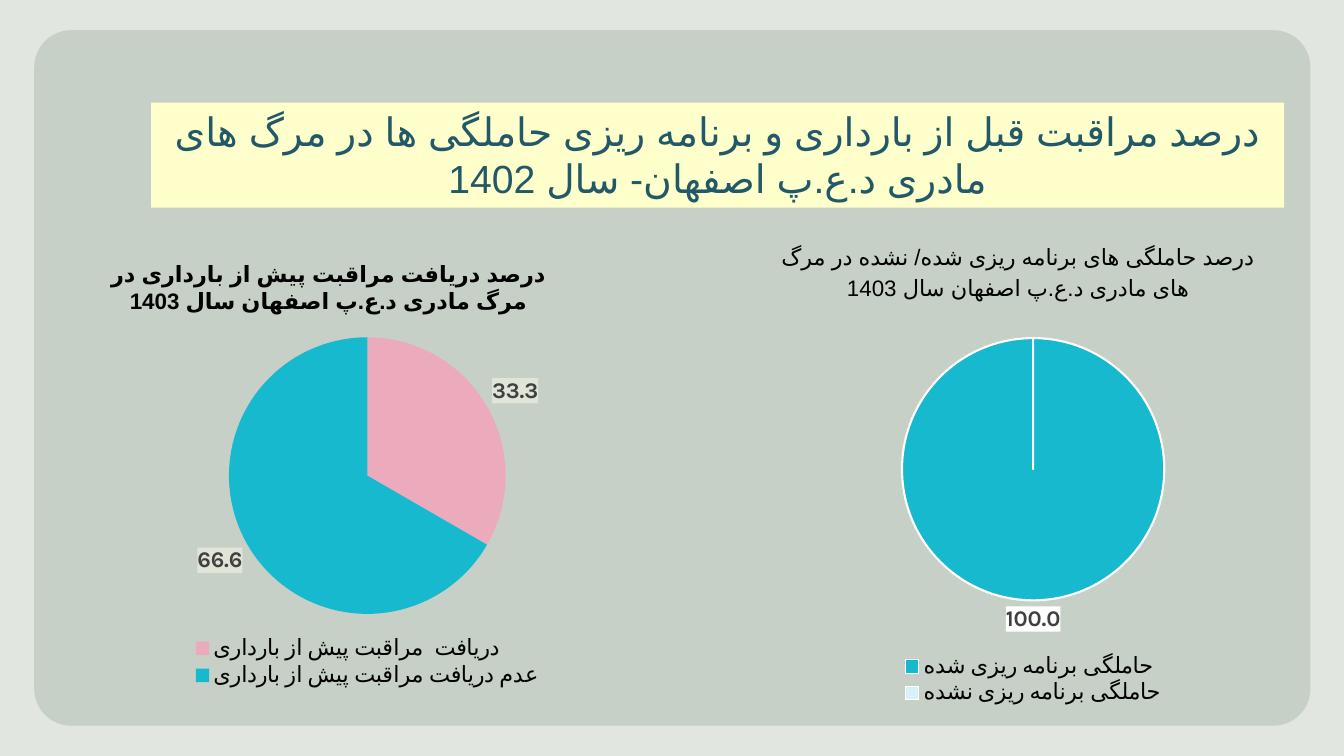
from dataclasses import dataclass

from lxml.etree import SubElement
from pptx import Presentation
from pptx.chart.data import CategoryChartData
from pptx.dml.color import RGBColor
from pptx.enum.chart import XL_CHART_TYPE, XL_LABEL_POSITION, XL_LEGEND_POSITION
from pptx.enum.shapes import MSO_SHAPE
from pptx.enum.text import MSO_ANCHOR, PP_ALIGN
from pptx.oxml import parse_xml
from pptx.oxml.ns import nsdecls, qn
from pptx.util import Pt

TEXT_FONT, PERSIAN_FONT, CHART_FONT = "Times New Roman", "Arial", "Karla"
TURQUOISE = "17B9CF"

Box = tuple[float, float, float, float]


@dataclass
class Caption:
    text: str
    box: Box
    size: float = 16
    color: str = "000000"
    fill: str | None = None
    bold: bool = False
    right_to_left: bool = True
    line_spacing: float = 1.0


@dataclass
class Pie:
    box: Box
    slices: dict[str, float]
    colors: tuple[str, str]
    label_fill: str
    plot_area: Box  # fractions of the chart
    legend_area: Box  # fractions of the chart
    outline: str | None = None


CAPTIONS = [
    Caption("درصد مراقبت قبل از بارداری و برنامه ریزی حاملگی ها در مرگ های مادری د.ع.پ اصفهان- سال 1402",
            (108, 73.4, 809.3, 74.9), size=28, color="215968", fill="FFFFCC"),
    Caption("درصد حاملگی های برنامه ریزی شده/ نشده در مرگ های مادری د.ع.پ اصفهان سال 1403",
            (543.6, 167, 367.2, 51.8), line_spacing=1.15),
    Caption("درصد دریافت مراقبت پیش از بارداری در مرگ مادری د.ع.پ اصفهان سال 1403",
            (58.3, 182.2, 352.8, 46.1), bold=True, right_to_left=False),
]

PIES = [
    Pie((564.5, 230.4, 347, 275.8),
        {"حاملگی برنامه ریزی شده": 100, "حاملگی برنامه ریزی نشده": 0},
        (TURQUOISE, "D8F2FB"), "FFFFFF",
        (0.23, 0.04, 0.54, 0.68), (0.22, 0.85, 0.56, 0.15), outline="FFFFFF"),
    Pie((47.5, 230.4, 429.8, 263.5),
        {"دریافت  مراقبت پیش از بارداری": 33.3, "عدم دریافت مراقبت پیش از بارداری": 66.6},
        ("EBABBC", TURQUOISE), "E1E5D8",
        (0.27, 0.04, 0.46, 0.75), (0.2, 0.84, 0.6, 0.16)),
]


def rgb(value: str) -> RGBColor:
    return RGBColor.from_string(value)


def paint(fill, color: str) -> None:
    fill.solid()
    fill.fore_color.rgb = rgb(color)


def set_font(font, name: str, size: float, color: str, bold: bool = False) -> None:
    font.name, font.size, font.bold = name, Pt(size), bold
    font.color.rgb = rgb(color)


def add_panel(page) -> None:
    panel = page.shapes.add_shape(MSO_SHAPE.ROUNDED_RECTANGLE, Pt(24.5), Pt(21.6), Pt(911.5), Pt(496.8))
    panel.adjustments[0] = 0.053
    panel.shadow.inherit = False
    paint(panel.fill, "C7D0C7")
    panel.line.fill.background()


def add_caption(page, caption: Caption) -> None:
    box = page.shapes.add_textbox(*map(Pt, caption.box))
    if caption.fill:
        paint(box.fill, caption.fill)
    frame = box.text_frame
    frame.word_wrap = True
    frame.vertical_anchor = MSO_ANCHOR.TOP
    para = frame.paragraphs[0]
    para.text = caption.text
    para.alignment = PP_ALIGN.CENTER
    para.line_spacing = caption.line_spacing
    set_font(para.font, TEXT_FONT, caption.size, caption.color, caption.bold)

    # Persian direction, language and font
    properties = para._p.get_or_add_pPr()
    if caption.right_to_left:
        properties.set("rtl", "1")
    defaults = properties.find(qn("a:defRPr"))
    defaults.set("lang", "fa-IR")
    SubElement(defaults, qn("a:cs")).set("typeface", PERSIAN_FONT)


def place(layout, area: Box, inner: bool = False) -> None:
    """Give a chart part a fixed position and size."""
    manual = SubElement(layout, qn("c:manualLayout"))
    settings = [("layoutTarget", "inner")] if inner else []
    settings += [("xMode", "edge"), ("yMode", "edge"), *zip("xywh", map(str, area))]
    for tag, value in settings:
        SubElement(manual, qn(f"c:{tag}")).set("val", value)


def add_pie(page, pie: Pie) -> None:
    data = CategoryChartData(number_format="0.0")
    data.categories = list(pie.slices)
    data.add_series("Series 1", list(pie.slices.values()))
    chart = page.shapes.add_chart(XL_CHART_TYPE.PIE, *map(Pt, pie.box), data).chart
    chart.has_title = False
    set_font(chart.font, CHART_FONT, 10, "000000")

    # Slices
    plot = chart.plots[0]
    plot.vary_by_categories = True
    for index, color in enumerate(pie.colors):
        form = plot.series[0].points[index].format
        paint(form.fill, color)
        if pie.outline:
            form.line.color.rgb = rgb(pie.outline)
            form.line.width = Pt(1.5)
        else:
            form.line.fill.background()

    # Value labels on a plain ground
    plot.has_data_labels = True
    labels = plot.data_labels
    labels.show_value = True
    labels.show_percentage = False
    labels.number_format, labels.number_format_is_linked = "0.0", False
    labels.position = XL_LABEL_POSITION.OUTSIDE_END
    set_font(labels.font, CHART_FONT, 16, "404040", bold=True)
    ground = parse_xml(f'<c:spPr {nsdecls("c", "a")}><a:solidFill><a:srgbClr val="{pie.label_fill}"/>'
                       "</a:solidFill></c:spPr>")
    labels._element.find(qn("c:txPr")).addprevious(ground)

    # Legend
    chart.has_legend = True
    legend = chart.legend
    legend.position = XL_LEGEND_POSITION.BOTTOM
    legend.include_in_layout = False
    set_font(legend.font, CHART_FONT, 16, "000000")

    # Fixed areas
    plot_area = chart._chartSpace.chart.plotArea
    for part, area, inner in ((plot_area, pie.plot_area, True), (legend._element, pie.legend_area, False)):
        layout = part.find(qn("c:layout"))
        if layout is None:
            layout = parse_xml(f'<c:layout {nsdecls("c")}/>')
            part.insert(0 if inner else 1, layout)
        place(layout, area, inner)


def main() -> None:
    deck = Presentation()
    deck.slide_width, deck.slide_height = Pt(960), Pt(540)
    page = deck.slides.add_slide(deck.slide_layouts[6])
    paint(page.background.fill, "E1E6E0")
    add_panel(page)
    for caption in CAPTIONS:
        add_caption(page, caption)
    for pie in PIES:
        add_pie(page, pie)
    deck.save("out.pptx")


if __name__ == "__main__":
    main()
